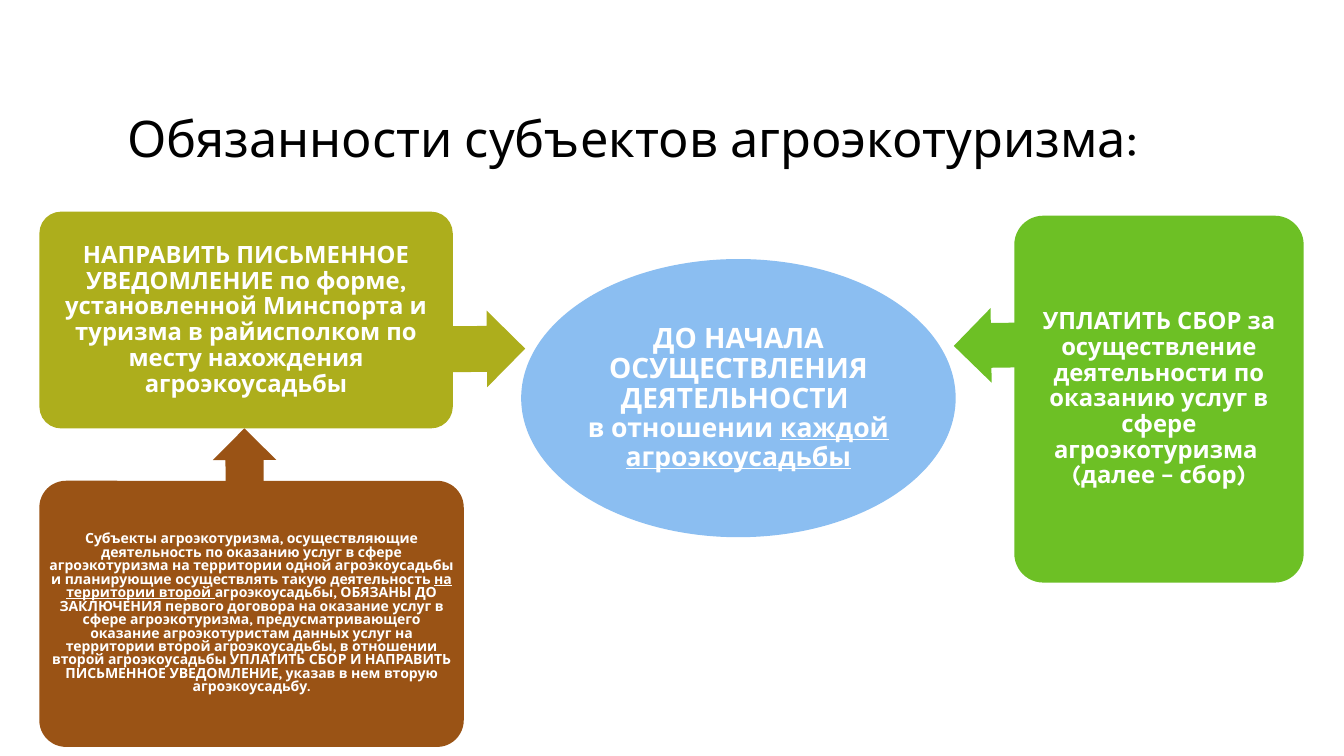
from pptx import Presentation
from pptx.dml.color import RGBColor
from pptx.enum.shapes import MSO_SHAPE
from pptx.enum.text import MSO_ANCHOR, MSO_AUTO_SIZE, PP_ALIGN
from pptx.util import Inches, Pt

FONT = "Karla"
BLACK = RGBColor(0x00, 0x00, 0x00)
WHITE = RGBColor(0xFF, 0xFF, 0xFF)
BLUE = RGBColor(0x8B, 0xBE, 0xF1)
GREEN = RGBColor(0x6D, 0xC0, 0x25)
OLIVE = RGBColor(0xAD, 0xAE, 0x1C)
BROWN = RGBColor(0x9A, 0x53, 0x15)

presentation = Presentation()
presentation.slide_width = Inches(13.33)
presentation.slide_height = Inches(7.5)
slide = presentation.slides.add_slide(presentation.slide_layouts[5])


def percent_box(left, top, width, height):
    """Turn percentages of the slide's size into left, top, width, height."""
    across = presentation.slide_width / 100
    down = presentation.slide_height / 100
    return int(left * across), int(top * down), int(width * across), int(height * down)


def add_filled_shape(kind, box, color):
    shape = slide.shapes.add_shape(kind, *percent_box(*box))
    shape.shadow.inherit = False
    shape.fill.solid()
    shape.fill.fore_color.rgb = color
    shape.line.fill.background()
    return shape


title = slide.shapes.title
title.left, title.top, title.width, title.height = percent_box(8.7, 13.47, 85.75, 9.47)
title.text_frame.text = "Обязанности субъектов агроэкотуризма:"
title.text_frame.word_wrap = False
title.text_frame.auto_size = MSO_AUTO_SIZE.SHAPE_TO_FIT_TEXT
title.text_frame.vertical_anchor = MSO_ANCHOR.TOP
paragraph = title.text_frame.paragraphs[0]
paragraph.alignment = PP_ALIGN.LEFT
paragraph.font.name = FONT
paragraph.font.size = Pt(36)
paragraph.font.color.rgb = BLACK

# Arrows lie behind the blocks they start from: box, rotation, color
arrows = [
    ((70.97, 40.67, 12.38, 9.87), 359.2, GREEN),
    ((15.45, 41.2, 23.63, 10.13), 179.6, OLIVE),
    ((15.23, 57.73, 5.93, 8.4), 89.7, BROWN),
]
for box, rotation, color in arrows:
    arrow = add_filled_shape(MSO_SHAPE.LEFT_ARROW, box, color)
    arrow.rotation = rotation
    arrow.adjustments[0] = 0.6
    arrow.adjustments[1] = 0.5

# Box, color, margin in inches, line spacing, lines of (text, size, underline)
blocks = [
    ((38.78, 34.27, 32.33, 36.8), BLUE, 0.01, 0.9, [
        [("ДО НАЧАЛА ОСУЩЕСТВЛЕНИЯ ДЕЯТЕЛЬНОСТИ ", 20, False)],
        [("в отношении ", 19, False), ("каждой агроэкоусадьбы", 19, True)],
    ]),
    ((75.47, 28.53, 21.53, 48.53), GREEN, 0.04, 0.9, [
        [("УПЛАТИТЬ СБОР за осуществление деятельности по оказанию услуг "
          "в сфере агроэкотуризма ", 17, False)],
        [("(далее – сбор)", 17, False)],
    ]),
    ((2.93, 28, 30.76, 28.67), OLIVE, 0.04, 0.9, [
        [("НАПРАВИТЬ ПИСЬМЕННОЕ УВЕДОМЛЕНИЕ по форме, установленной Минспорта "
          "и туризма в райисполком по месту нахождения агроэкоусадьбы", 17, False)],
    ]),
    ((2.93, 63.6, 31.58, 35.2), BROWN, 0.02, 0.8, [
        [("Субъекты агроэкотуризма, осуществляющие деятельность по оказанию услуг "
          "в сфере агроэкотуризма на территории одной агроэкоусадьбы и планирующие "
          "осуществлять такую деятельность ", 10, False),
         ("на территории второй ", 10, True),
         ("агроэкоусадьбы, ОБЯЗАНЫ ДО ЗАКЛЮЧЕНИЯ первого договора на оказание услуг "
          "в сфере агроэкотуризма, предусматривающего оказание агроэкотуристам данных "
          "услуг на территории второй агроэкоусадьбы, в отношении второй агроэкоусадьбы "
          "УПЛАТИТЬ СБОР И НАПРАВИТЬ ПИСЬМЕННОЕ УВЕДОМЛЕНИЕ, указав в нем вторую "
          "агроэкоусадьбу.", 10, False)],
    ]),
]
for box, color, margin, line_spacing, lines in blocks:
    if color == BLUE:
        block = add_filled_shape(MSO_SHAPE.OVAL, box, color)
    else:
        block = add_filled_shape(MSO_SHAPE.ROUNDED_RECTANGLE, box, color)
        block.adjustments[0] = 0.1
    frame = block.text_frame
    frame.word_wrap = True
    frame.vertical_anchor = MSO_ANCHOR.MIDDLE
    frame.margin_left = frame.margin_right = Inches(margin)
    frame.margin_top = frame.margin_bottom = Inches(margin)
    paragraph = frame.paragraphs[0]
    paragraph.alignment = PP_ALIGN.CENTER
    paragraph.line_spacing = line_spacing
    paragraph.font.name = FONT
    paragraph.font.bold = True
    paragraph.font.color.rgb = WHITE
    for number, line in enumerate(lines):
        if number:
            paragraph.add_line_break()
        for text, size, underline in line:
            run = paragraph.add_run()
            run.text = text
            run.font.size = Pt(size)
            if underline:
                run.font.underline = True

presentation.save("out.pptx")
